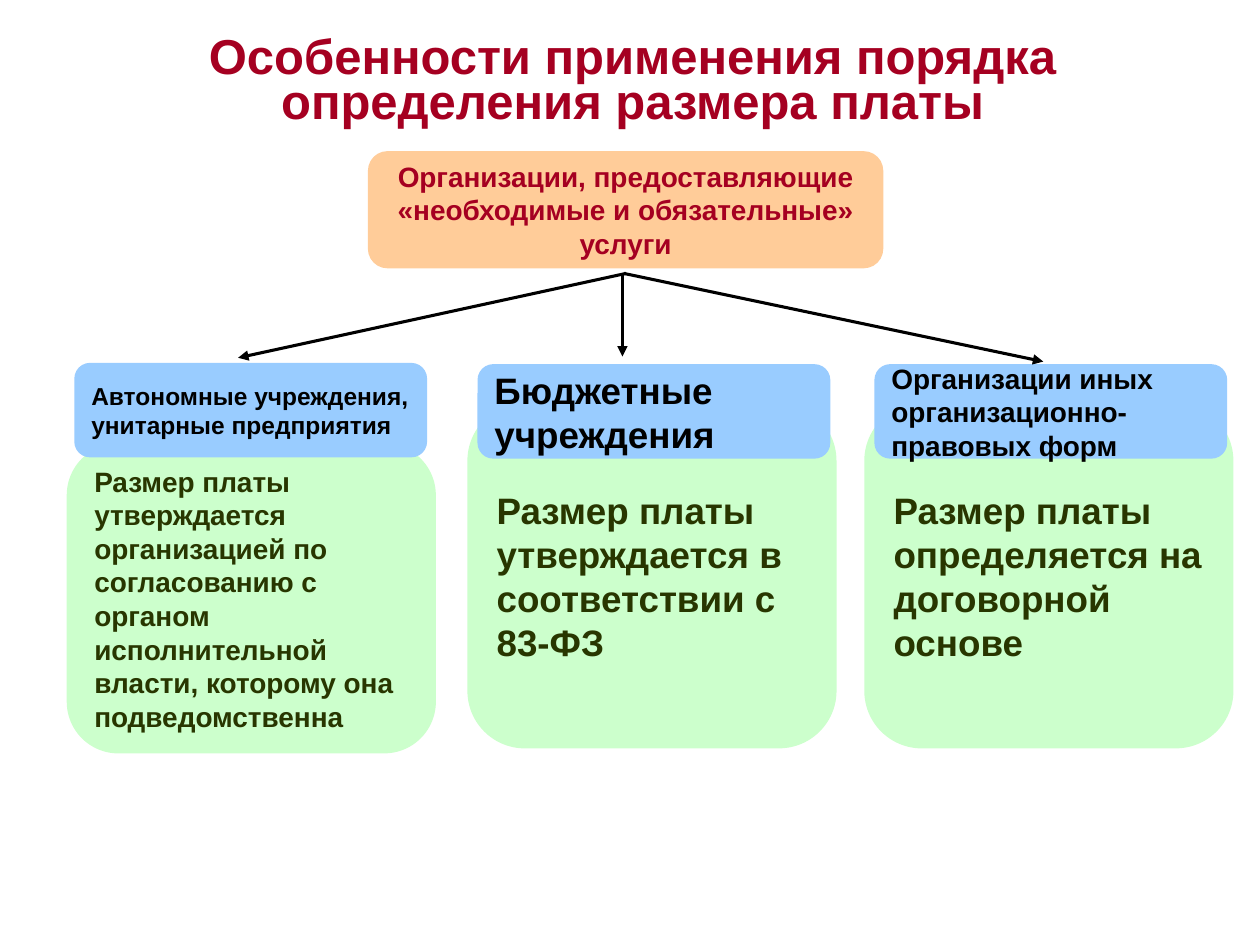
from lxml import etree
from pptx import Presentation, util as u
from pptx.dml.color import RGBColor
from pptx.enum import shapes, text
from pptx.oxml.ns import qn

# Content
TITLE = "Особенности применения порядка определения размера платы"
PROVIDERS = "Организации, предоставляющие «необходимые и обязательные» услуги"
# heading, size, rule, size, left, top and height of the rule card, offset and top of the heading
COLUMNS = [
    ("Автономные учреждения, унитарные предприятия", 14,
     "Размер платы утверждается организацией по согласованию с органом "
     "исполнительной власти, которому она подведомственна", 16,
     (0.53, 3.52, 2.46), (0.06, 2.88)),
    ("Бюджетные учреждения", 21,
     "Размер платы утверждается в соответствии с 83-ФЗ", 21,
     (3.71, 3.2, 2.74), (0.08, 2.89)),
    ("Организации иных организационно-правовых форм", 16,
     "Размер платы определяется на договорной основе", 21,
     (6.86, 3.2, 2.74), (0.08, 2.89)),
]
ARROWS = [((4.97, 2.17), (1.89, 2.84)),
          ((4.94, 2.18), (4.94, 2.83)),
          ((4.95, 2.17), (8.28, 2.87))]

# Style
FONT = "Arial"
RED, GREEN_TEXT, BLACK = "A50021", "283600", "000000"
ORANGE, GREEN, BLUE = "FFCC99", "CCFFCC", "99CCFF"
RULE_WIDTH, HEADING_WIDTH, HEADING_HEIGHT = 2.93, 2.8, 0.75
LEFT, CENTER = text.PP_ALIGN.LEFT, text.PP_ALIGN.CENTER


def rgb(value):
    return RGBColor.from_string(value)


def write(shape, wording, size, color, align):
    frame = shape.text_frame
    frame.text = wording
    frame.word_wrap = True
    frame.auto_size = text.MSO_AUTO_SIZE.NONE
    frame.vertical_anchor = text.MSO_ANCHOR.MIDDLE
    paragraph = frame.paragraphs[0]
    paragraph.alignment = align
    font = paragraph.runs[0].font
    font.name, font.size, font.bold = FONT, u.Pt(size), True
    font.color.rgb = rgb(color)
    return paragraph


def add_card(slide, box, fill, wording, size, color, align=LEFT):
    card = slide.shapes.add_shape(shapes.MSO_SHAPE.ROUNDED_RECTANGLE, *map(u.Inches, box))
    card.shadow.inherit = False
    card.fill.solid()
    card.fill.fore_color.rgb = rgb(fill)
    card.line.fill.background()
    write(card, wording, size, color, align)


def add_arrow(slide, start, end):
    arrow = slide.shapes.add_connector(shapes.MSO_CONNECTOR.STRAIGHT, *map(u.Inches, start + end))
    arrow.line.color.rgb = rgb(BLACK)
    arrow.line.width = u.Pt(1.75)
    etree.SubElement(arrow.line._get_or_add_ln(), qn("a:tailEnd"), type="triangle")
    etree.SubElement(arrow._element.spPr, qn("a:effectLst"))


def main():
    deck = Presentation()
    deck.slide_width, deck.slide_height = u.Inches(10), u.Inches(7.5)
    slide = deck.slides.add_slide(deck.slide_layouts[5])

    # Title
    title = slide.shapes.title
    title.left, title.top, title.width, title.height = map(u.Inches, (0.35, 0.06, 9.34, 1.21))
    write(title, TITLE, 28, RED, CENTER).line_spacing = 0.75

    # Root of the scheme
    add_card(slide, (2.92, 1.2, 4.09, 0.93), ORANGE, PROVIDERS, 16, RED, CENTER)

    # Kinds of organisation, each heading over its rule
    for heading, heading_size, rule, rule_size, (left, top, height), (offset, heading_top) in COLUMNS:
        add_card(slide, (left, top, RULE_WIDTH, height), GREEN, rule, rule_size, GREEN_TEXT)
        add_card(slide, (left + offset, heading_top, HEADING_WIDTH, HEADING_HEIGHT),
                 BLUE, heading, heading_size, BLACK)

    # Arrows from the root to the headings
    for start, end in ARROWS:
        add_arrow(slide, start, end)

    deck.save("out.pptx")


if __name__ == "__main__":
    main()
